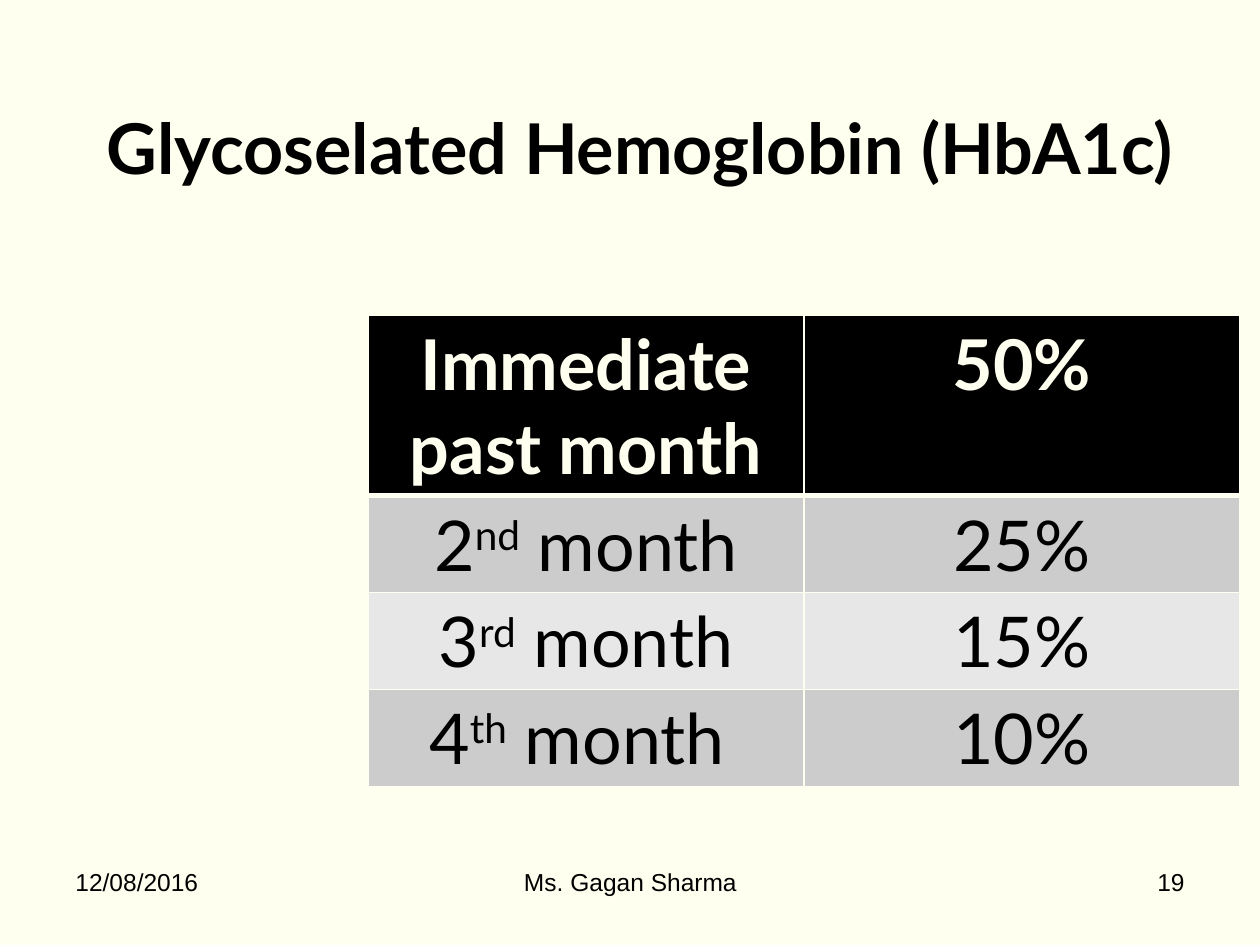
from lxml.etree import SubElement
from pptx import Presentation
from pptx.dml.color import RGBColor
from pptx.enum.text import MSO_ANCHOR as ANCHOR, PP_ALIGN as ALIGN
from pptx.oxml.ns import qn
from pptx.util import Emu, Pt

IVORY, BLACK, GREY, PALE = "FFFFF0", "000000", "CCCCCC", "E7E7E7"
HEADER_H, ROW_H, COL_W = 179, 97, 436

# Each label is a list of (text, is superscript) runs.
ROWS = [
    ([("Immediate past month", False)], "50%"),
    ([("2", False), ("nd", True), (" month", False)], "25%"),
    ([("3", False), ("rd", True), (" month", False)], "15%"),
    ([("4", False), ("th", True), (" month ", False)], "10%"),
]


def px(n):
    return Emu(round(n * 914400 / 126))


def rgb(color):
    return RGBColor.from_string(color)


def write(tf, text, size=40, font="Lato", color=BLACK, bold=False,
          align=ALIGN.CENTER):
    """Fill a text frame with a string or a list of (text, superscript) runs."""
    p = tf.paragraphs[0]
    p.alignment = align
    for part, raised in [(text, False)] if isinstance(text, str) else text:
        r = p.add_run()
        r.text = part
        r.font.size, r.font.name, r.font.bold = Pt(size), font, bold
        r.font.color.rgb = rgb(color)
        if raised:
            r.font._element.set("baseline", "30000")


def add_text(slide, box, text, anchor=ANCHOR.TOP, **fmt):
    tf = slide.shapes.add_textbox(*map(px, box)).text_frame
    tf.word_wrap = True
    tf.vertical_anchor = anchor
    write(tf, text, **fmt)


def set_borders(cell, top=1, bottom=1):
    tcPr = cell._tc.get_or_add_tcPr()
    for tag, width in (("lnL", 1), ("lnR", 1), ("lnT", top), ("lnB", bottom)):
        ln = SubElement(tcPr, qn(f"a:{tag}"), w=str(Pt(width)))
        fill = SubElement(ln, qn("a:solidFill"))
        SubElement(fill, qn("a:srgbClr"), val=IVORY)


def add_month_table(slide, left, top):
    height = HEADER_H + ROW_H * (len(ROWS) - 1)
    table = slide.shapes.add_table(
        len(ROWS), 2, px(left), px(top), px(2 * COL_W), px(height)).table
    for col in table.columns:
        col.width = px(COL_W)
    for i, values in enumerate(ROWS):
        header = i == 0
        table.rows[i].height = px(HEADER_H if header else ROW_H)
        for cell, value in zip(table.rows[i].cells, values):
            set_borders(cell, top=3 if i == 1 else 1, bottom=3 if header else 1)
            cell.fill.solid()
            cell.fill.fore_color.rgb = rgb(
                BLACK if header else GREY if i % 2 else PALE)
            write(cell.text_frame, value, bold=header,
                  color=IVORY if header else BLACK)


def main():
    prs = Presentation()
    prs.slide_width, prs.slide_height = px(1260), px(945)
    slide = prs.slides.add_slide(prs.slide_layouts[6])
    slide.background.fill.solid()
    slide.background.fill.fore_color.rgb = rgb(IVORY)

    add_text(slide, (53, 38, 1191, 157), "Glycoselated Hemoglobin (HbA1c) ",
             anchor=ANCHOR.BOTTOM, bold=True)
    add_month_table(slide, 368, 315)
    for left, width, text, align in (
            (63, 294, "12/08/2016", ALIGN.LEFT),
            (431, 399, "Ms. Gagan Sharma", ALIGN.CENTER),
            (903, 294, "19", ALIGN.RIGHT)):
        add_text(slide, (left, 861, width, 66), text, size=14, font="Arial",
                 align=align)
    prs.save("out.pptx")


if __name__ == "__main__":
    main()
